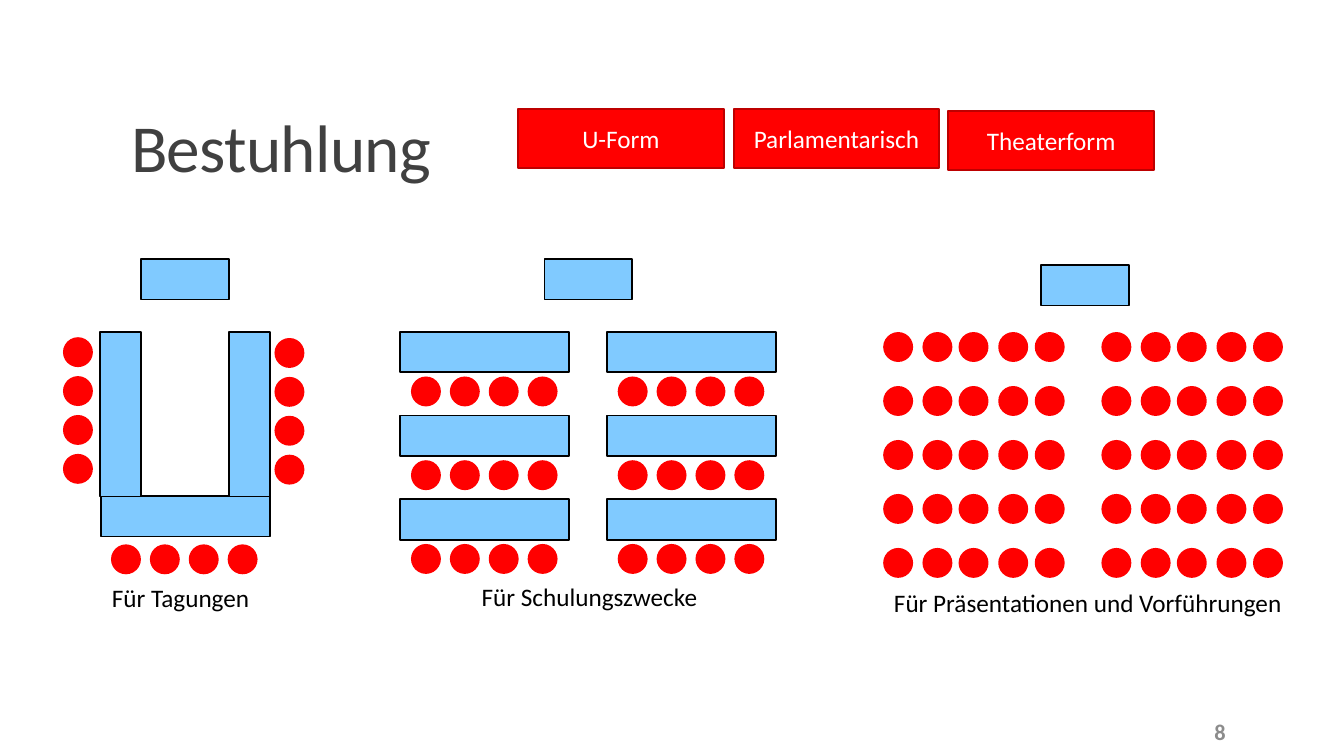
from pptx import Presentation
from pptx.dml.color import RGBColor
from pptx.enum.shapes import MSO_SHAPE
from pptx.enum.text import MSO_ANCHOR, MSO_AUTO_SIZE, PP_ALIGN
from pptx.util import Cm, Pt

RECTANGLE = MSO_SHAPE.RECTANGLE
OVAL = MSO_SHAPE.OVAL
MIDDLE = MSO_ANCHOR.MIDDLE
BOTTOM = MSO_ANCHOR.BOTTOM
LEFT = PP_ALIGN.LEFT
CENTER = PP_ALIGN.CENTER
RIGHT = PP_ALIGN.RIGHT
NO_AUTOFIT = MSO_AUTO_SIZE.NONE

RED = "FF0000"
DARK_RED = "BD0000"
BLUE = "80CAFF"
BLACK = "000000"
CHAIR = 0.71
CHAIR_STEP = 0.98
TABLE_LENGTH = 4.27
TABLE_DEPTH = 1.02

deck = Presentation()
deck.slide_width = Cm(33.87)
deck.slide_height = Cm(19.05)
page = deck.slides.add_slide(deck.slide_layouts[5])


def add_block(kind, left, top, width, height, fill, line):
    block = page.shapes.add_shape(kind, Cm(left), Cm(top), Cm(width), Cm(height))
    block.shadow.inherit = False
    block.fill.solid()
    block.fill.fore_color.rgb = RGBColor.from_string(fill)
    block.line.color.rgb = RGBColor.from_string(line)
    block.line.width = Pt(1.25)
    return block


def write(shape, text, size, color, align):
    para = shape.text_frame.paragraphs[0]
    para.alignment = align
    span = para.add_run()
    span.text = text
    span.font.name = "Calibri"
    span.font.size = Pt(size)
    span.font.color.rgb = RGBColor.from_string(color)
    return span


title = page.shapes.title
title.left, title.top, title.width, title.height = Cm(3.05), Cm(0.79), Cm(27.94), Cm(4.04)
title.text_frame.auto_size = NO_AUTOFIT
title.text_frame.vertical_anchor = BOTTOM
title_span = write(title, "Bestuhlung", 48, "404040", LEFT)
title_span.font._element.set("spc", "-50")
title.text_frame.paragraphs[0].line_spacing = 0.85

number_box = page.shapes.add_textbox(Cm(27.51), Cm(17.93), Cm(3.63), Cm(1.02))
number_box.text_frame.word_wrap = True
number_box.text_frame.vertical_anchor = MIDDLE
write(number_box, "8", 16, "8C8C8C", RIGHT).font.bold = True

tables = [
    (2.54, 12.5, TABLE_LENGTH, TABLE_DEPTH),
    (2.53, 8.37, TABLE_DEPTH, 4.14),
    (5.78, 8.37, TABLE_DEPTH, 4.14),
]
for left, top in [(3.56, 6.53), (13.72, 6.53), (26.24, 6.68)]:
    tables.append((left, top, 2.21, TABLE_DEPTH))

chairs = []
for seat in range(4):
    offset = seat * CHAIR_STEP
    chairs.append((1.61, 8.52 + offset))
    chairs.append((6.94, 8.54 + offset))
    chairs.append((2.82 + offset, 13.74))

for table_left in (10.08, 15.29):
    for row in range(3):
        table_top = 8.36 + row * 2.11
        tables.append((table_left, table_top, TABLE_LENGTH, TABLE_DEPTH))
        for seat in range(4):
            chairs.append((table_left + 0.3 + seat * CHAIR_STEP, table_top + 1.15))

for block_left in (22.28, 27.78):
    for row in range(5):
        for seat_offset in (0, 0.99, 1.9, 2.9, 3.82):
            chairs.append((block_left + seat_offset, 8.39 + row * 1.36))

for left, top, width, height in tables:
    add_block(RECTANGLE, left, top, width, height, BLUE, BLACK)
for left, top in chairs:
    add_block(OVAL, left, top, CHAIR, CHAIR, RED, RED)

captions = [
    ("Für Tagungen", 2.57, 14.55, 4.01, False),
    ("Für Schulungszwecke", 11.89, 14.53, 6.02, False),
    ("Für Präsentationen und Vorführungen", 22.28, 14.68, 10.39, True),
]
for text, left, top, width, wraps in captions:
    caption = page.shapes.add_textbox(Cm(left), Cm(top), Cm(width), Cm(1.02))
    caption.text_frame.word_wrap = wraps
    write(caption, text, 18, BLACK, LEFT)

labels = [("U-Form", 13.06, 2.74), ("Parlamentarisch", 18.49, 2.74), ("Theaterform", 23.9, 2.79)]
for text, left, top in labels:
    label = add_block(RECTANGLE, left, top, 5.18, 1.5, RED, DARK_RED)
    label.text_frame.vertical_anchor = MIDDLE
    write(label, text, 18, "FFFFFF", CENTER)

deck.save("out.pptx")
